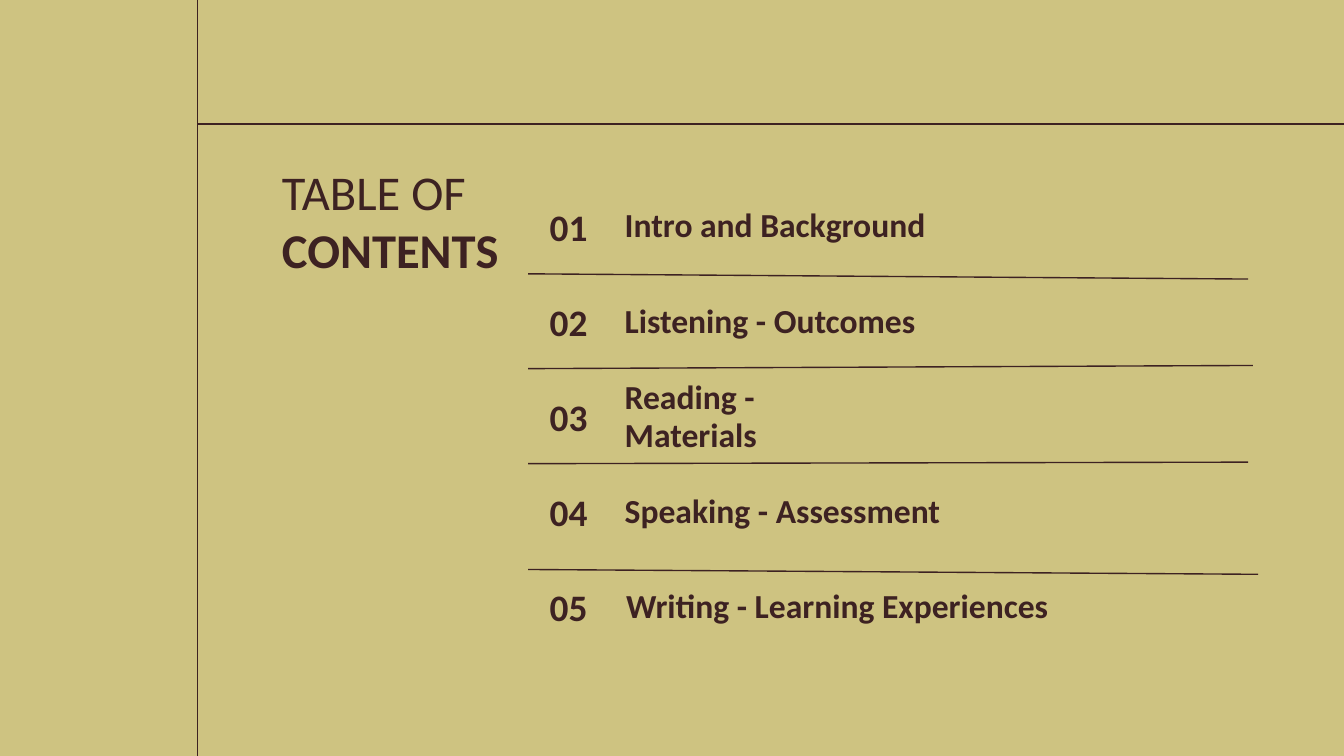
from typing import NamedTuple

from lxml import etree
from pptx import Presentation
from pptx import util as u
from pptx.dml.color import RGBColor
from pptx.enum import shapes, text
from pptx.oxml import ns

SAND = RGBColor(0xCE, 0xC3, 0x81)
BROWN = RGBColor(0x3D, 0x22, 0x22)
WIDE, HIGH = 720, 405
TOP, STEP, TALL = 100.1, 50.94, 42.5
EDGE = 283


class Box(NamedTuple):
    left: float
    top: float
    width: float
    height: float


class Item(NamedTuple):
    label: str
    width: float
    left: float = 327.6


class Rule(NamedTuple):
    left: float
    top: float
    right: float
    end: float


ITEMS = [
    Item("Intro and Background", 261.4),
    Item("Listening - Outcomes", 280.8),
    Item("Reading - Materials", 154.1),
    Item("Speaking - Assessment", 288.7),
    Item("Writing - Learning Experiences", 325.4, 328.3),
]
RULES = [
    Rule(105.8, 0, 105.8, HIGH),
    Rule(105.8, 66.5, WIDE, 66.5),
    Rule(EDGE, 146.7, 668.7, 149.5),
    Rule(EDGE, 197.5, 671.2, 195.8),
    Rule(EDGE, 248.4, 668.7, 247.6),
    Rule(EDGE, 305.1, 674, 307.7),
]


def draw_rule(slide, rule: Rule) -> None:
    """Draw one thin brown line."""
    line = slide.shapes.add_connector(
        shapes.MSO_CONNECTOR.STRAIGHT, *(u.Pt(value) for value in rule))
    line.line.color.rgb = BROWN
    line.line.width = u.Pt(0.75)
    etree.SubElement(line._element.spPr, ns.qn("a:effectLst"))


def draw_text(slide, box: Box, runs: list[tuple[str, bool]], size: float,
              form: dict) -> None:
    """Write one paragraph of plain and bold runs in a box."""
    frame = slide.shapes.add_textbox(*(u.Pt(value) for value in box)).text_frame
    inset = u.Pt(7.2)
    look = {"word_wrap": True, "vertical_anchor": text.MSO_ANCHOR.MIDDLE,
            "margin_left": inset, "margin_right": inset,
            "margin_top": inset, "margin_bottom": inset}
    for name, value in look.items():
        setattr(frame, name, value)
    para = frame.paragraphs[0]
    for name, value in form.items():
        setattr(para, name, value)
    for words, bold in runs:
        run = para.add_run()
        run.text = words
        font = {"name": "Calibri", "size": u.Pt(size), "bold": bold}
        for name, value in font.items():
            setattr(run.font, name, value)
        run.font.color.rgb = BROWN


def draw_item(slide, index: int, item: Item) -> None:
    """Draw the number and label of one entry."""
    top = TOP + index * STEP
    draw_text(slide, Box(EDGE, top, 38.9, TALL), [(f"{index + 1:02}", True)],
              20, {"alignment": text.PP_ALIGN.RIGHT})
    draw_text(slide, Box(item.left, top, item.width, TALL),
              [(item.label, True)], 18, {"line_spacing": 0.95})


def main() -> None:
    """Build and save the contents slide."""
    deck = Presentation()
    deck.slide_width, deck.slide_height = u.Pt(WIDE), u.Pt(HIGH)
    slide = deck.slides.add_slide(deck.slide_layouts[6])
    fill = slide.background.fill
    fill.solid()
    fill.fore_color.rgb = SAND
    for rule in RULES:
        draw_rule(slide, rule)
    draw_text(slide, Box(144, 82.1, 204.5, 71.3),
              [("TABLE OF ", False), ("CONTENTS", True)], 26, {})
    for index, item in enumerate(ITEMS):
        draw_item(slide, index, item)
    deck.save("out.pptx")


if __name__ == "__main__":
    main()
